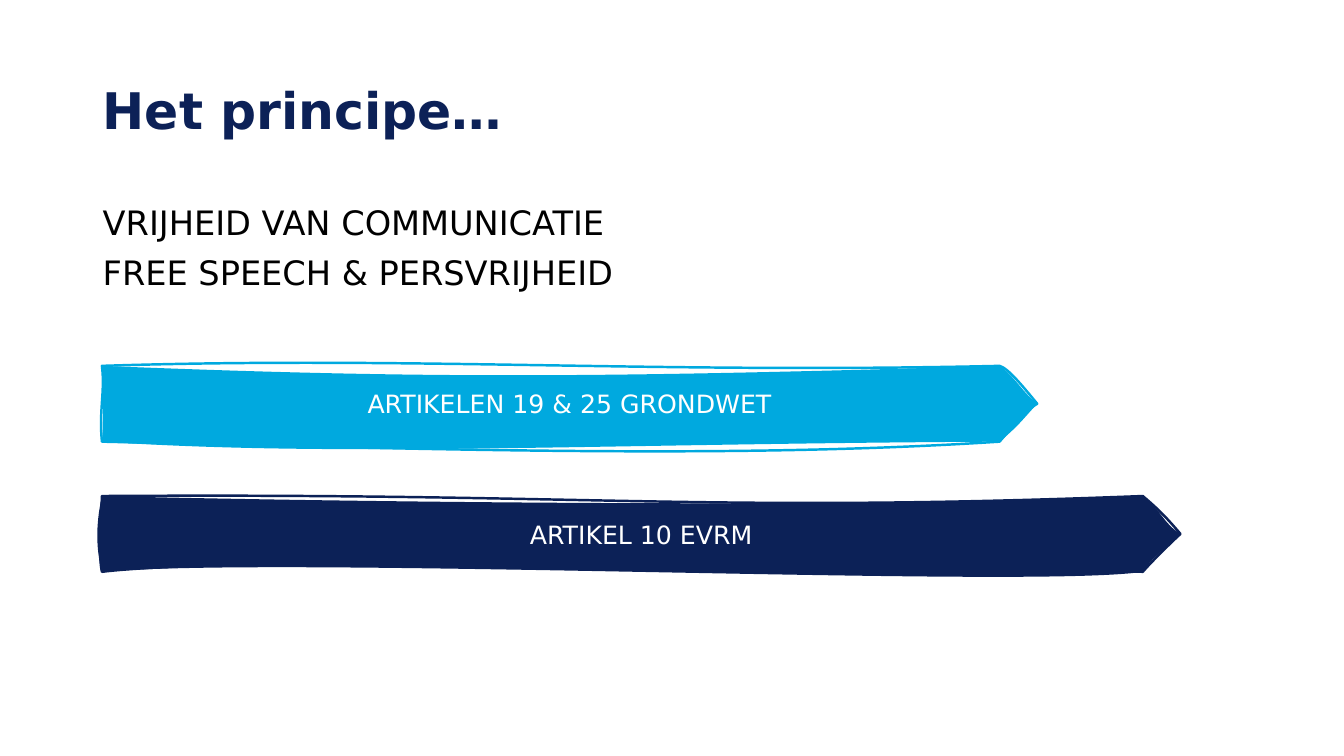
from lxml import etree
from pptx import Presentation
from pptx.dml.color import RGBColor
from pptx.enum.text import MSO_ANCHOR, PP_ALIGN
from pptx.oxml.ns import qn
from pptx.util import Cm, Pt

NAVY = RGBColor(0x0C, 0x21, 0x57)
SKY = RGBColor(0x00, 0xA9, 0xDF)
BLACK = RGBColor(0, 0, 0)
WHITE = RGBColor(255, 255, 255)
FONT = "DejaVu Sans"
HEIGHT, TIP = 1.91, 0.95  # arrow height and tip length in cm


def add_run(p, text, size, color, bold=False):
    r = p.add_run()
    r.text = text
    r.font.name, r.font.size, r.font.bold = FONT, Pt(size), bold
    r.font.color.rgb = color


def add_path(path_list, corners, controls, **flags):
    """Add a closed path with one Bezier curve per edge."""
    path = etree.SubElement(path_list, qn("a:path"), w=str(Cm(corners[2][0])),
                            h=str(Cm(HEIGHT)), **flags)
    steps = [("moveTo", corners[:1])]
    for edge, end in zip(controls, corners[1:] + corners[:1]):
        steps.append(("cubicBezTo", [edge[:2], edge[2:], end]))
    for tag, points in steps:
        step = etree.SubElement(path, qn("a:" + tag))
        for x, y in points:
            etree.SubElement(step, qn("a:pt"), x=str(Cm(x)), y=str(Cm(y)))
    etree.SubElement(path, qn("a:close"))


prs = Presentation()
prs.slide_width, prs.slide_height = Cm(33.87), Cm(19.05)
s = prs.slides.add_slide(prs.slide_layouts[6])

# Title and body
texts = [
    (1.02, 3.68, MSO_ANCHOR.MIDDLE, ["Het principe…"], 36, NAVY, True),
    (5.08, 12.09, MSO_ANCHOR.TOP,
     ["VRIJHEID VAN COMMUNICATIE", "FREE SPEECH & PERSVRIJHEID"], 24, BLACK, False),
]
for top, height, anchor, lines, size, color, bold in texts:
    tf = s.shapes.add_textbox(Cm(2.34), Cm(top), Cm(29.21), Cm(height)).text_frame
    tf.word_wrap = True
    tf.vertical_anchor = anchor
    for i, line in enumerate(lines):
        p = tf.add_paragraph() if i else tf.paragraphs[0]
        p.line_spacing = 0.9
        if i:
            p.space_before = Pt(10)
        add_run(p, line, size, color, bold)

# Sketched arrows: control points in cm for top, upper tip, lower tip, bottom, left
arrows = [
    (9.22, 23.57, SKY, "ARTIKELEN 19 & 25 GRONDWET",
     [(7.8, -0.25, 13.82, 0.2), (22.83, 0.05, 23.22, 0.53), (23.24, 1.14, 22.83, 1.68),
      (16, 2.34, 8.69, 2.11), (-0.08, 1.14, 0.08, 0.66)],
     [(8.2, 0.33, 12.47, 0.3), (22.99, 0.25, 23.22, 0.69), (23.14, 1.42, 23.11, 1.5),
      (12.5, 1.96, 6.07, 2.31), (0.03, 1.7, 0.05, 0.79)]),
    (12.5, 27.18, NAVY, "ARTIKEL 10 EVRM",
     [(12.57, -0.08, 14.99, 0.43), (26.72, 0.41, 26.95, 0.69), (27.05, 1.07, 26.47, 1.63),
      (16.48, 1.5, 2.72, 1.57), (-0.08, 1.57, -0.03, 0.89)],
     [(7.34, 0.18, 20.32, 0.3), (26.75, 0.43, 26.75, 0.69), (27.08, 1.09, 26.47, 1.52),
      (23.37, 2.34, 4.85, 1.5), (-0.18, 1.24, -0.13, 0.58)]),
]
for top, width, color, label, outline, body in arrows:
    corners = [(0, 0), (width - TIP, 0), (width, HEIGHT / 2),
               (width - TIP, HEIGHT), (0, HEIGHT)]
    builder = s.shapes.build_freeform(0, 0, scale=Cm(1))
    builder.add_line_segments(corners[1:])
    sp = builder.convert_to_shape(Cm(2.57), Cm(top))
    sp.left, sp.top, sp.width, sp.height = Cm(2.57), Cm(top), Cm(width), Cm(HEIGHT)
    sp.shadow.inherit = False
    sp.fill.solid()
    sp.fill.fore_color.rgb = color
    sp.line.color.rgb = color
    sp.line.width = Pt(1.75)

    # Bend the straight edges: a line-only path and a fill-only path
    path_list = sp.element.xpath(".//a:pathLst")[0]
    path_list.remove(path_list[0])
    add_path(path_list, corners, outline, fill="none")
    add_path(path_list, corners, body, stroke="0")

    tf = sp.text_frame
    tf.word_wrap = True
    tf.vertical_anchor = MSO_ANCHOR.MIDDLE
    p = tf.paragraphs[0]
    p.alignment = PP_ALIGN.CENTER
    add_run(p, label, 18, WHITE)

prs.save("out.pptx")
